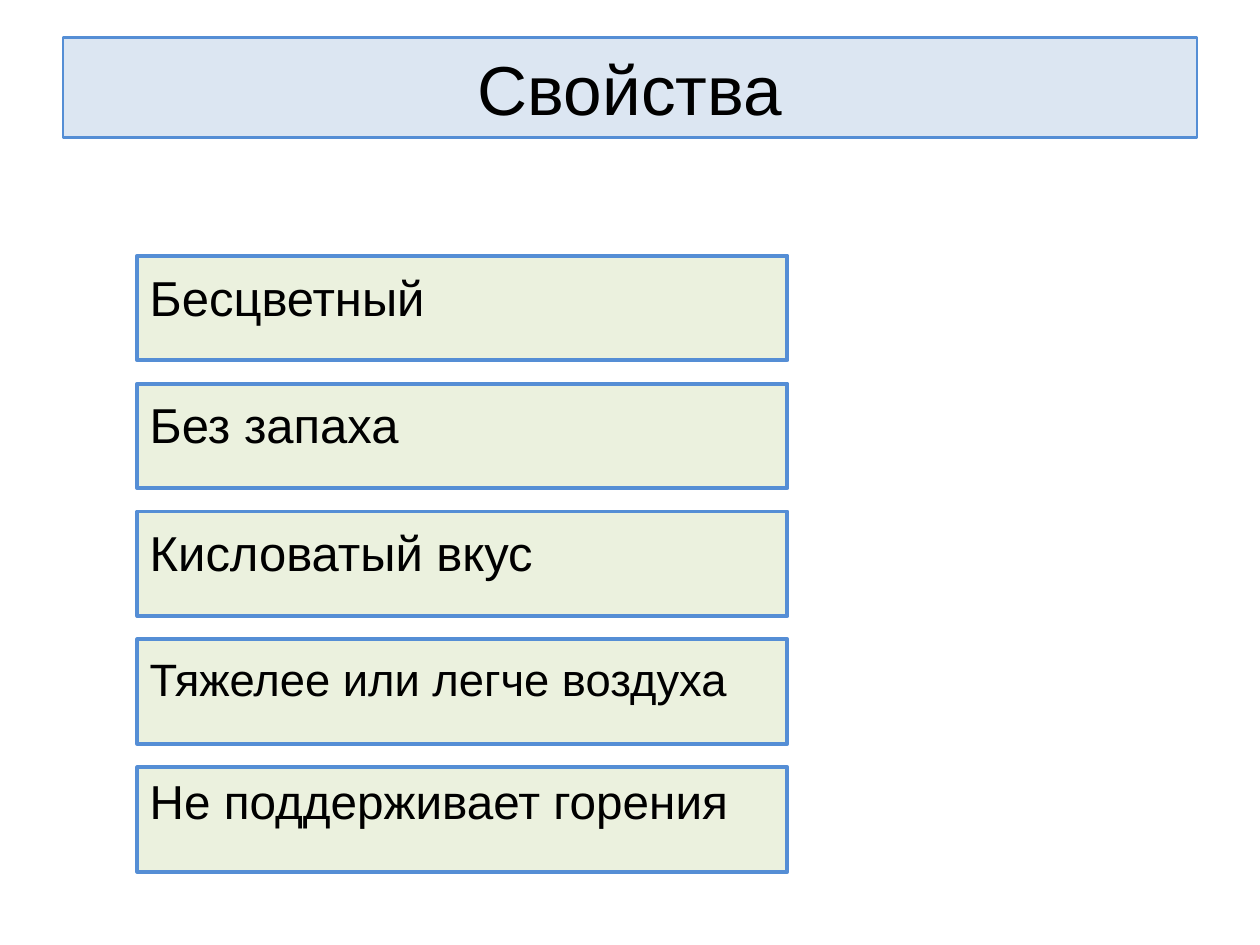
import pptx
import pptx.util
import pptx.dml.color
import pptx.enum.shapes
import pptx.enum.text

Inches = pptx.util.Inches
Pt = pptx.util.Pt
ALIGN = pptx.enum.text.PP_ALIGN
ANCHOR = pptx.enum.text.MSO_ANCHOR

TITLE = "Свойства"
PROPERTIES = [
    ("Бесцветный", 28, 1.0),
    ("Без запаха", 28, 1.0),
    ("Кисловатый вкус", 28, 1.0),
    ("Тяжелее или легче воздуха", 25.9, 1.0),
    ("Не поддерживает горения", 27.2, 0.9),
]

THEME = {
    "font": "Arial",
    "text": "000000",
    "line": "558ED5",
    "title_fill": "DCE6F2",
    "property_fill": "EBF1DE",
    "title_size": 39.6,
}

LEFT, TOP, WIDTH, HEIGHT = 1.09, 2.03, 5.16, 0.83
PITCH = 1.015


def color(name):
    return pptx.dml.color.RGBColor.from_string(THEME[name])


def style_box(box, fill, line_width):
    box.fill.solid()
    box.fill.fore_color.rgb = color(fill)
    box.line.color.rgb = color("line")
    box.line.width = Pt(line_width)


def write_text(box, text, size, align, anchor):
    frame = box.text_frame
    frame.word_wrap = True
    frame.auto_size = pptx.enum.text.MSO_AUTO_SIZE.NONE
    frame.vertical_anchor = anchor
    para = frame.paragraphs[0]
    para.text = text
    para.alignment = align
    para.font.name = THEME["font"]
    para.font.size = Pt(size)
    para.font.color.rgb = color("text")
    return para


def main():
    deck = pptx.Presentation()
    deck.slide_width, deck.slide_height = Inches(10), Inches(7.5)
    page = deck.slides.add_slide(deck.slide_layouts[5])

    title = page.shapes.title
    title.left, title.top = Inches(0.5), Inches(0.3)
    title.width, title.height = Inches(9), Inches(0.79)
    style_box(title, "title_fill", 1.5)
    write_text(title, TITLE, THEME["title_size"], ALIGN.CENTER, ANCHOR.MIDDLE)

    for index, (text, size, spacing) in enumerate(PROPERTIES):
        box = page.shapes.add_shape(
            pptx.enum.shapes.MSO_SHAPE.RECTANGLE,
            Inches(LEFT), Inches(TOP + index * PITCH), Inches(WIDTH), Inches(HEIGHT),
        )
        box.shadow.inherit = False
        style_box(box, "property_fill", 2.25)
        box.text_frame.margin_top = Inches(0.09)
        para = write_text(box, text, size, ALIGN.LEFT, ANCHOR.TOP)
        para.line_spacing = spacing

    deck.save("out.pptx")


if __name__ == "__main__":
    main()
